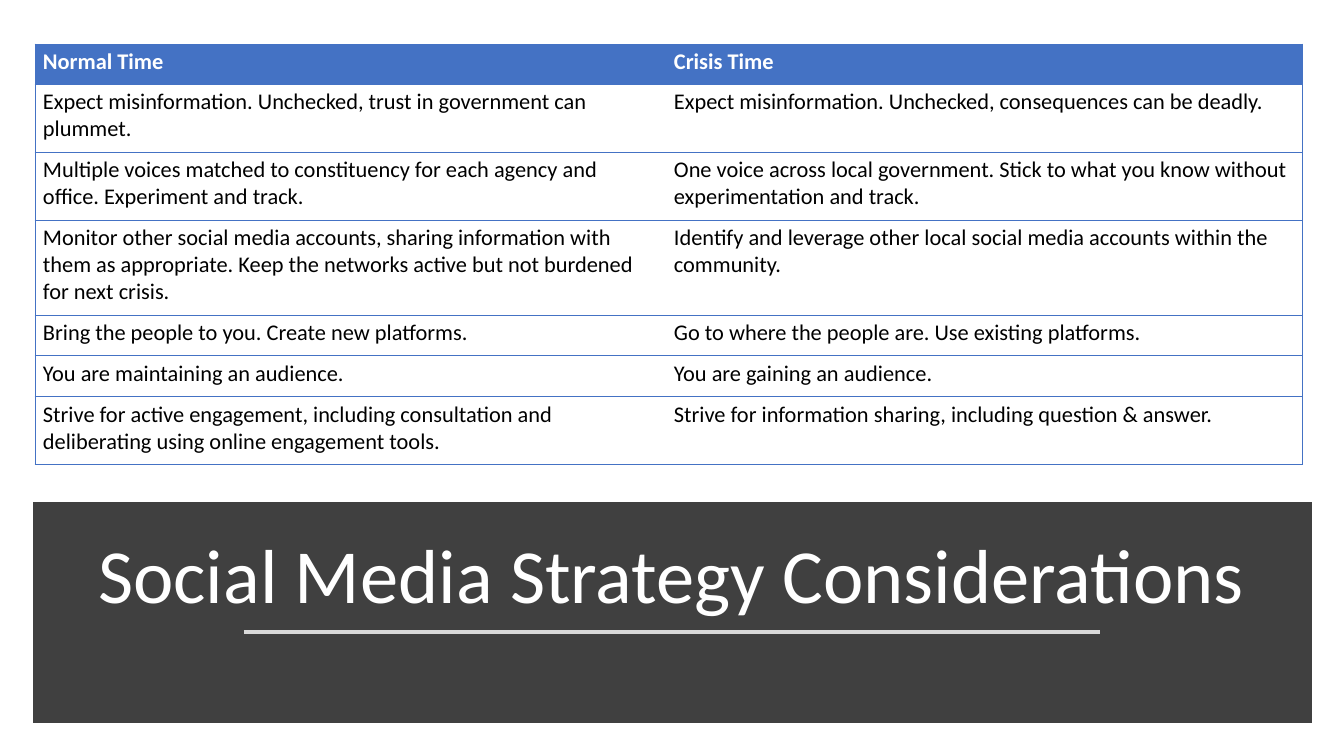
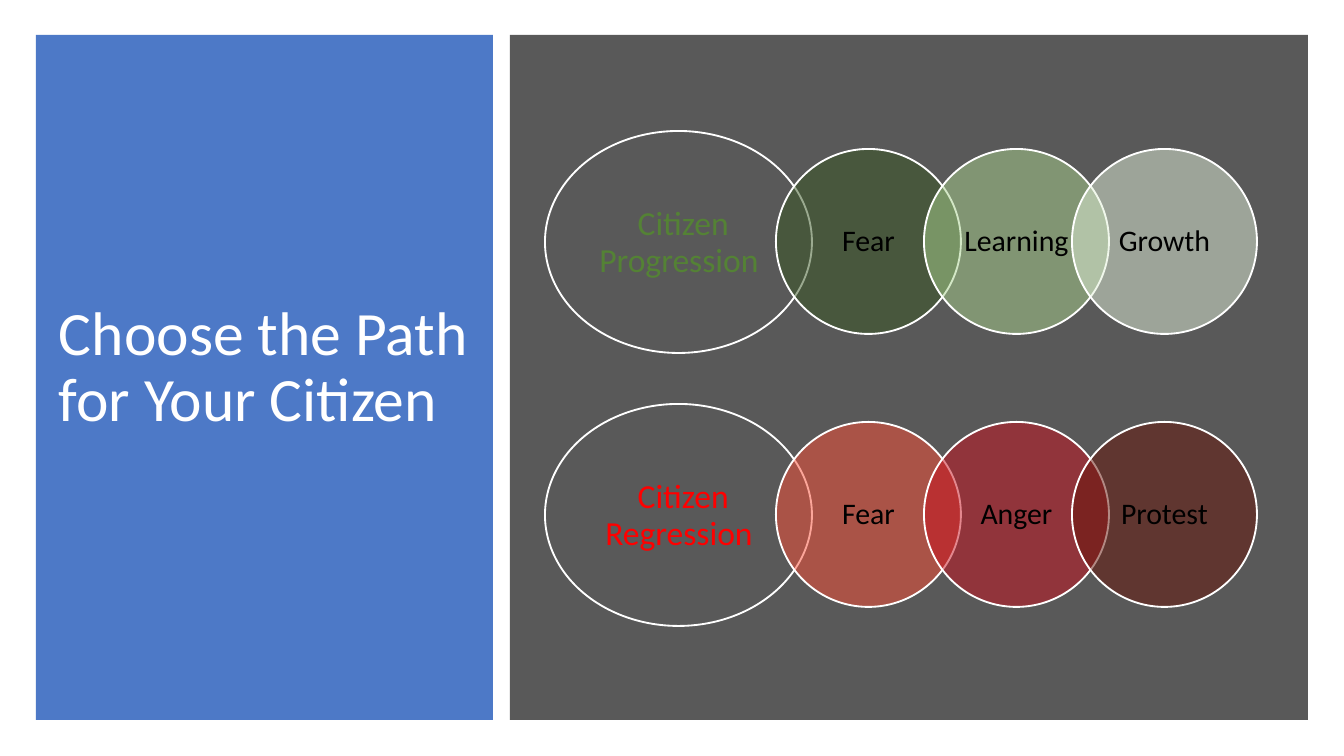
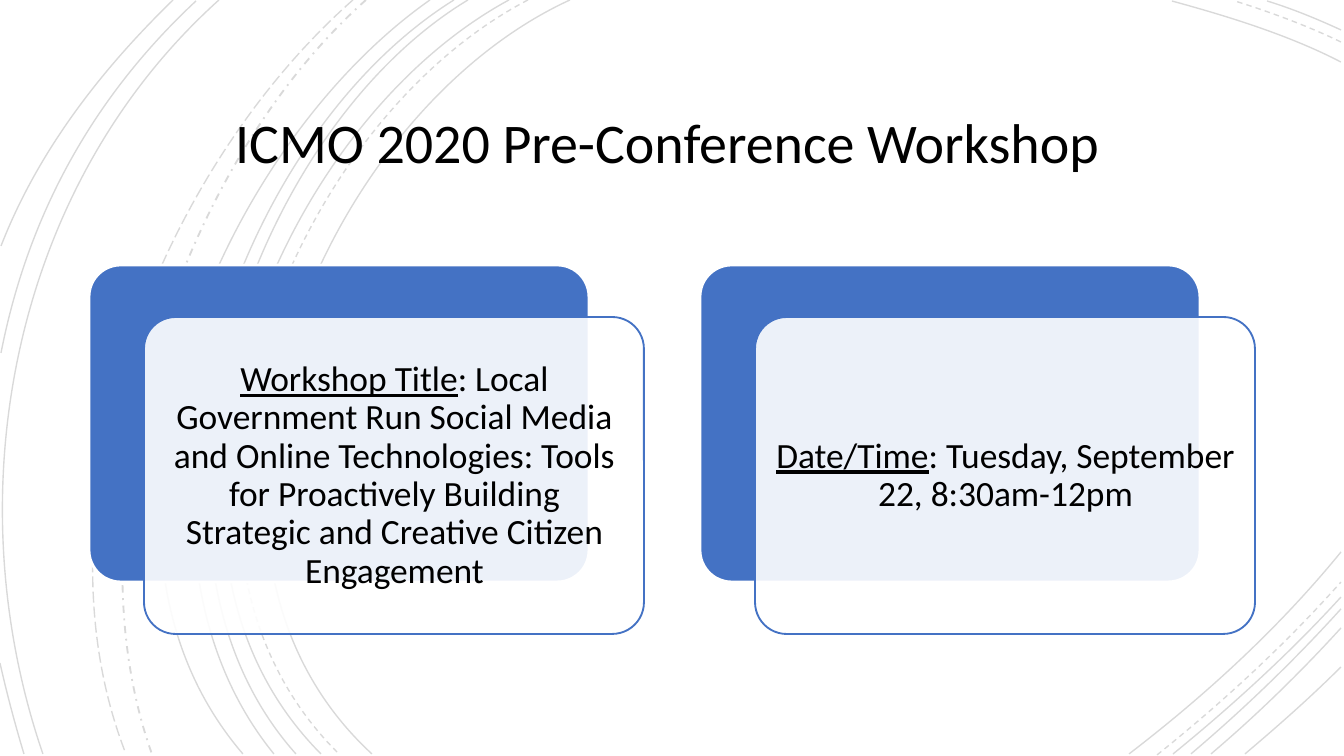
from lxml import etree
from pptx import Presentation
from pptx import util as u
from pptx.dml import color
from pptx.enum import dml, shapes, text
from pptx.oxml import ns

WIDTH, HEIGHT = 1344, 756
SCALE = 9144000 / WIDTH
FONT = "Calibri"
COLORS = {
    "white": "FFFFFF", "black": "000000", "blue": "4472C4", "band": "404040",
    "rule": "D9D9D9", "panel": "595959", "leaf": "548235", "red": "FF0000",
    "forest": "385723", "grass": "A9D18E", "mist": "E2F0D9",
    "coral": "FB4E37", "crimson": "C9111E", "maroon": "671409",
}

STRATEGIES = [
    ("Normal Time", "Crisis Time"),
    ("Expect misinformation. Unchecked, trust in government can plummet.",
     "Expect misinformation. Unchecked, consequences can be deadly."),
    ("Multiple voices matched to constituency for each agency and office. Experiment and track.",
     "One voice across local government. Stick to what you know without experimentation and track."),
    ("Monitor other social media accounts, sharing information with them as appropriate. "
     "Keep the networks active but not burdened for next crisis.",
     "Identify and leverage other local social media accounts within the community."),
    ("Bring the people to you. Create new platforms.",
     "Go to where the people are. Use existing platforms."),
    ("You are maintaining an audience.", "You are gaining an audience."),
    ("Strive for active engagement, including consultation and deliberating using online engagement tools.",
     "Strive for information sharing, including question & answer."),
]
COLUMN_WIDTHS = (631, 636)
ROW_HEIGHTS = (40, 68, 68, 95, 41, 41, 68)

CITIZEN_PATHS = [
    ("Progression", "leaf", [("Fear", "forest"), ("Learning", "grass"), ("Growth", "mist")]),
    ("Regression", "red", [("Fear", "coral"), ("Anger", "crimson"), ("Protest", "maroon")]),
]

CARDS = [
    ("Workshop Title", ": Local Government Run Social Media and Online Technologies: "
     "Tools for Proactively Building Strategic and Creative Citizen Engagement"),
    ("Date/Time", ": Tuesday, September 22, 8:30am-12pm"),
]

SOLID_ARCS = [
    [(570, 0), (317, 116), (144, 544), (372, 754)],
    [(1341, 62), (1289, 35), (1227, 16), (1172, 1)],
    [(1129, 754), (1206, 695), (1279, 628), (1341, 552)],
    [(509, 0), (271, 129), (110, 542), (321, 754)],
    [(1341, 30), (1317, 19), (1293, 9), (1267, 1)],
    [(1173, 754), (1232, 706), (1290, 653), (1341, 597)],
    [(468, 0), (246, 134), (110, 546), (296, 754)],
    [(1191, 754), (1243, 710), (1294, 661), (1341, 609)],
    [(454, 0), (233, 138), (98, 538), (274, 754)],
    [(1211, 754), (1257, 715), (1301, 672), (1341, 628)],
    [(430, 0), (219, 148), (54, 534), (243, 754)],
    [(1245, 754), (1277, 727), (1310, 698), (1341, 667)],
    [(219, 0), (11, 187), (-46, 495), (43, 754)],
    [(196, 1), (93, 97), (28, 215), (1, 353)],
    [(0, 663), (7, 694), (15, 724), (24, 754)],
    [(173, 0), (101, 70), (38, 151), (1, 246)],
]
DASHED_ARCS = [
    [(528, 0), (286, 126), (124, 542), (339, 754)],
    [(1341, 42), (1308, 26), (1270, 12), (1235, 1)],
    [(1157, 755), (1222, 703), (1285, 645), (1341, 582)],
]
DASH_DOT_ARC = [(366, 0), (177, 168), (66, 513), (152, 754)]
LONG_DASH_ARC = [(353, 0), (159, 171), (28, 503), (126, 754)]


def px(value):
    return u.Emu(round(value * SCALE))


def box(*lengths):
    return [px(length) for length in lengths]


def rgb(name):
    return color.RGBColor.from_string(COLORS[name])


def set_alpha(shape, parents, percent):
    steps = [ns.qn(f"a:{tag}") for tag in (*parents, "solidFill", "srgbClr")]
    paint_color = shape.element.spPr.find("/".join(steps))
    etree.SubElement(paint_color, ns.qn("a:alpha")).set("val", str(percent * 1000))


def paint(shape, fill=None, line=None, width=1, fill_alpha=100, line_alpha=100):
    shape.shadow.inherit = False
    if fill:
        shape.fill.solid()
        shape.fill.fore_color.rgb = rgb(fill)
        if fill_alpha < 100:
            set_alpha(shape, (), fill_alpha)
    else:
        shape.fill.background()
    if line:
        shape.line.color.rgb = rgb(line)
        shape.line.width = u.Pt(width)
        if line_alpha < 100:
            set_alpha(shape, ("ln",), line_alpha)
    else:
        shape.line.fill.background()


def write(frame, runs, size=16, ink="black", bold=False, align=text.PP_ALIGN.LEFT,
          anchor=text.MSO_ANCHOR.MIDDLE, spacing=0.9, insets=(13, 7)):
    frame.word_wrap = True
    frame.auto_size = text.MSO_AUTO_SIZE.NONE
    frame.vertical_anchor = anchor
    frame.margin_left = frame.margin_right = px(insets[0])
    frame.margin_top = frame.margin_bottom = px(insets[1])
    paragraph = frame.paragraphs[0]
    paragraph.alignment = align
    paragraph.line_spacing = spacing
    for words, changes in [(runs, {})] if isinstance(runs, str) else runs:
        run = paragraph.add_run()
        run.text = words
        run.font.name = FONT
        run.font.size = u.Pt(changes.get("size", size))
        run.font.bold = bold
        run.font.underline = changes.get("underline", False)
        run.font.color.rgb = rgb(ink)


def add_shape(slide, kind, position, **look):
    shape = slide.shapes.add_shape(kind, *box(*position))
    paint(shape, **look)
    return shape


def add_label(slide, position, runs, **form):
    label = slide.shapes.add_textbox(*box(*position))
    write(label.text_frame, runs, align=text.PP_ALIGN.CENTER, **form)


def add_title(slide, position, words, **form):
    title = slide.shapes.title
    title.left, title.top, title.width, title.height = box(*position)
    write(title.text_frame, words, **form)
    slide.shapes.element.append(title.element)


def add_rule(slide, start, end, ink, width):
    rule = slide.shapes.add_connector(shapes.MSO_CONNECTOR.STRAIGHT, *box(*start, *end))
    rule.line.color.rgb = rgb(ink)
    rule.line.width = u.Pt(width)
    etree.SubElement(rule.element.spPr, ns.qn("a:effectLst"))


def set_borders(cell, visible):
    properties = cell._tc.get_or_add_tcPr()
    for side in "LRTB":
        border = etree.SubElement(properties, ns.qn(f"a:ln{side}"), w=str(u.Pt(0.5)))
        if side in visible:
            fill = etree.SubElement(border, ns.qn("a:solidFill"))
            etree.SubElement(fill, ns.qn("a:srgbClr"), val=COLORS["blue"])
        else:
            etree.SubElement(border, ns.qn("a:noFill"))


def add_strategy_table(slide, left, top):
    frame = slide.shapes.add_table(
        len(STRATEGIES), len(COLUMN_WIDTHS),
        *box(left, top, sum(COLUMN_WIDTHS), sum(ROW_HEIGHTS)))
    table = frame.table
    table.first_row = table.horz_banding = False
    for column, width in zip(table.columns, COLUMN_WIDTHS):
        column.width = px(width)
    for index, (row, height, words) in enumerate(zip(table.rows, ROW_HEIGHTS, STRATEGIES)):
        row.height = px(height)
        header = index == 0
        for cell, side, phrase in zip(row.cells, "LR", words):
            set_borders(cell, side + "TB")
            if header:
                cell.fill.solid()
                cell.fill.fore_color.rgb = rgb("blue")
            else:
                cell.fill.background()
            cell.margin_left = cell.margin_right = px(8)
            cell.margin_top = cell.margin_bottom = px(4)
            paragraph = cell.text_frame.paragraphs[0]
            run = paragraph.add_run()
            run.text = phrase
            run.font.name = FONT
            run.font.size = u.Pt(12)
            run.font.bold = header
            run.font.color.rgb = rgb("white" if header else "black")


def add_citizen_path(slide, top, outcome, ink, stages):
    oval = shapes.MSO_SHAPE.OVAL
    add_shape(slide, oval, (545, top, 267, 222), line="white")
    heading = [(" ", {"size": 20}), ("Citizen", {}), (" ", {"size": 20}), (outcome, {})]
    add_label(slide, (584, top + 32, 190, 157), heading, size=18, ink=ink, insets=(11, 4))
    for index, (stage, fill) in enumerate(stages):
        left = 776 + 148 * index
        add_shape(slide, oval, (left, top + 18, 185, 185), fill=fill, fill_alpha=50, line="white")
        add_label(slide, (left + 27, top + 45, 131, 131), stage, insets=(11, 3))


def add_arc(slide, points, dash=None, width=0.75):
    start, *others = [box(*point) for point in points]
    builder = slide.shapes.build_freeform(*start)
    builder.add_line_segments(others, close=False)
    arc = builder.convert_to_shape()
    outline = arc.element.spPr.find(".//" + ns.qn("a:path"))
    curve = etree.SubElement(outline, ns.qn("a:cubicBezTo"))
    for segment in outline.findall(ns.qn("a:lnTo")):
        curve.append(segment[0])
        outline.remove(segment)
    paint(arc, line="black", width=width, line_alpha=15)
    if dash:
        arc.line.dash_style = dash


def add_card(slide, left, heading, detail):
    rounded = shapes.MSO_SHAPE.ROUNDED_RECTANGLE
    back = add_shape(slide, rounded, (left, 265, 500, 317), fill="blue", line="white", width=1.5)
    front = add_shape(slide, rounded, (left + 55, 317, 500, 317),
                      fill="white", fill_alpha=90, line="blue")
    back.adjustments[0] = front.adjustments[0] = 0.1
    add_label(slide, (left + 65, 327, 481, 298),
              [(heading, {"underline": True}), (detail, {})], size=19, insets=(11, 11))


def build_strategy(slide):
    band = add_shape(slide, shapes.MSO_SHAPE.RECTANGLE, (42, 511, 1261, 203),
                     fill="band", line="band", width=10)
    etree.SubElement(band.element.spPr.find(ns.qn("a:ln")), ns.qn("a:miter"), lim="800000")
    add_title(slide, (58, 525, 1228, 102), "Social Media Strategy Considerations", size=41,
              ink="white", align=text.PP_ALIGN.CENTER, anchor=text.MSO_ANCHOR.BOTTOM)
    add_rule(slide, (244, 632), (1100, 632), "rule", 1.75)
    add_strategy_table(slide, 35, 44)


def build_paths(slide):
    rectangle = shapes.MSO_SHAPE.RECTANGLE
    add_shape(slide, rectangle, (36, 35, 457, 685), fill="blue", fill_alpha=95)
    add_title(slide, (46, 64, 446, 609), "Choose the Path for Your Citizen", size=33, ink="white")
    add_shape(slide, rectangle, (510, 35, 798, 685), fill="panel")
    for index, path in enumerate(CITIZEN_PATHS):
        add_citizen_path(slide, 131 + 273 * index, *path)


def build_workshop(slide):
    for points in SOLID_ARCS:
        add_arc(slide, points)
    for points in DASHED_ARCS:
        add_arc(slide, points, dash=dml.MSO_LINE.DASH)
    add_arc(slide, DASH_DOT_ARC, dash=dml.MSO_LINE.DASH_DOT, width=1)
    add_arc(slide, LONG_DASH_ARC, dash=dml.MSO_LINE.LONG_DASH)
    add_title(slide, (194, 87, 956, 116), "ICMO 2020 Pre-Conference Workshop\t",
              size=30, align=text.PP_ALIGN.CENTER)
    for index, card in enumerate(CARDS):
        add_card(slide, 89 + 611 * index, *card)


def main():
    presentation = Presentation()
    presentation.slide_width, presentation.slide_height = box(WIDTH, HEIGHT)
    title_only = presentation.slide_layouts[5]
    for build in (build_strategy, build_paths, build_workshop):
        build(presentation.slides.add_slide(title_only))
    presentation.save("out.pptx")


if __name__ == "__main__":
    main()
